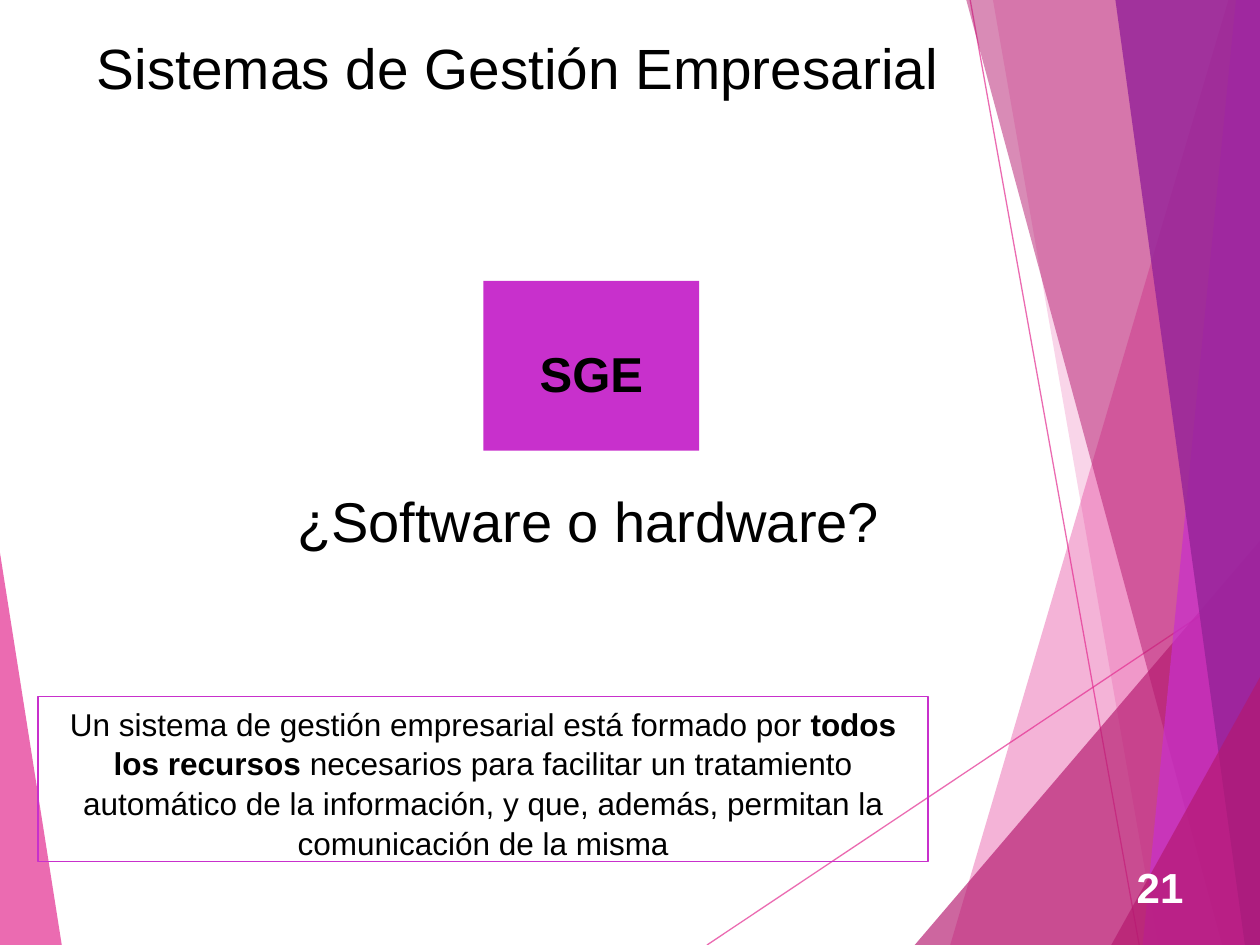
from pptx import Presentation
from pptx.dml.color import RGBColor
from pptx.enum.shapes import MSO_CONNECTOR, MSO_SHAPE
from pptx.enum.text import MSO_ANCHOR, PP_ALIGN
from pptx.oxml.ns import qn
from pptx.util import Pt
from lxml.etree import SubElement

FONT = "Arial"
BLACK, WHITE = "000000", "FFFFFF"
PINK, ROSE, VIOLET, PURPLE = "E32D91", "B4186E", "C830CC", "962499"
W, H = 720, 540


def color(fmt, value, alpha=100):
    """Set a fill's solid colour, with opacity in percent."""
    fmt.solid()
    fmt.fore_color.rgb = RGBColor.from_string(value)
    if alpha < 100:
        for clr in fmt._xPr.iter(qn("a:srgbClr")):
            SubElement(clr, qn("a:alpha"), val=str(alpha * 1000))


def facet(s, points, fill, alpha):
    pts = [(Pt(x), Pt(y)) for x, y in points]
    builder = s.shapes.build_freeform(*pts[0])
    builder.add_line_segments(pts[1:], close=True)
    sp = builder.convert_to_shape()
    sp.shadow.inherit = False
    color(sp.fill, fill, alpha)
    sp.line.fill.background()


def thin_line(s, x1, y1, x2, y2):
    cxn = s.shapes.add_connector(MSO_CONNECTOR.STRAIGHT, Pt(x1), Pt(y1), Pt(x2), Pt(y2))
    color(cxn.line.fill, PINK, 70)
    cxn.line.width = Pt(0.75)
    SubElement(cxn._element.spPr, qn("a:effectLst"))


def write(sp, runs, size, value=BLACK, align=PP_ALIGN.LEFT, anchor=MSO_ANCHOR.TOP, wrap=True):
    """Fill one paragraph with (text, bold) runs."""
    tf = sp.text_frame
    tf.word_wrap = wrap
    tf.vertical_anchor = anchor
    p = tf.paragraphs[0]
    p.alignment = align
    p.font.name, p.font.size = FONT, Pt(size)
    p.font.color.rgb = RGBColor.from_string(value)
    for text, bold in runs:
        r = p.add_run()
        r.text = text
        r.font.bold = bold
    return p


def text_box(s, box, *args, **kwargs):
    write(s.shapes.add_textbox(*map(Pt, box)), *args, **kwargs)


def rectangle(s, box):
    sp = s.shapes.add_shape(MSO_SHAPE.RECTANGLE, *map(Pt, box))
    sp.shadow.inherit = False
    return sp


def backdrop(s, w, h):
    # Left wedge and thin lines
    facet(s, [(0, 316), (35.3, h), (0, h)], PINK, 70)
    thin_line(s, 404, h, w, 329)
    thin_line(s, 554.4, 0, 651, h)
    # Overlapping facets on the right, back to front
    facets = [
        ([(702, 0), (543, h), (w, h), (w, 0)], PINK, 36),
        ([(567.4, 0), (661.7, h), (w, h), (w, 0)], PINK, 20),
        ([(522.7, h), (w, 309), (w, h)], ROSE, 66),
        ([(552.2, 0), (698.4, h), (w, h), (w, 0)], ROSE, 50),
        ([(706.3, 0), (653, h), (w, h), (w, 0)], VIOLET, 70),
        ([(637.4, 0), (711.4, h), (w, h), (w, 0)], PURPLE, 82),
        ([(635, h), (w, 387), (w, h)], ROSE, 66),
    ]
    for points, fill, alpha in facets:
        facet(s, points, fill, alpha)


def title(s, box):
    sp = s.shapes.title
    sp.left, sp.top, sp.width, sp.height = map(Pt, box)
    write(sp, [("Sistemas de Gestión Empresarial", False)], 32.4)


def sge_block(s, box):
    sp = rectangle(s, box)
    color(sp.fill, VIOLET)
    sp.line.fill.background()
    sp.text_frame.margin_top = Pt(36)
    write(sp, [("SGE", True)], 28, align=PP_ALIGN.CENTER)


def definition(s, box):
    sp = rectangle(s, box)
    sp.fill.background()
    color(sp.line.fill, VIOLET)
    sp.line.width = Pt(0.75)
    p = write(sp, [
        ("Un sistema de gestión empresarial está formado por ", False),
        ("todos los recursos", True),
        (" necesarios para facilitar un tratamiento automático de la información, "
         "y que, además, permitan la comunicación de la misma", False),
    ], 18, align=PP_ALIGN.CENTER)
    p.line_spacing = 1.05


def main():
    prs = Presentation()
    prs.slide_width, prs.slide_height = Pt(W), Pt(H)
    s = prs.slides.add_slide(prs.slide_layouts[5])
    backdrop(s, W, H)
    title(s, (48.2, 15.1, 499.7, 70.6))
    # Slide number
    text_box(s, (605.5, 492.5, 77.8, 28.8), [("21", True)], 24, WHITE,
             PP_ALIGN.RIGHT, MSO_ANCHOR.MIDDLE)
    sge_block(s, (276.3, 160.5, 123.3, 97))
    text_box(s, (162.7, 274.3, 349.9, 46), [("¿Software o hardware?", False)], 32, wrap=False)
    definition(s, (21.8, 398, 508.6, 94.3))
    prs.save("out.pptx")


if __name__ == "__main__":
    main()
